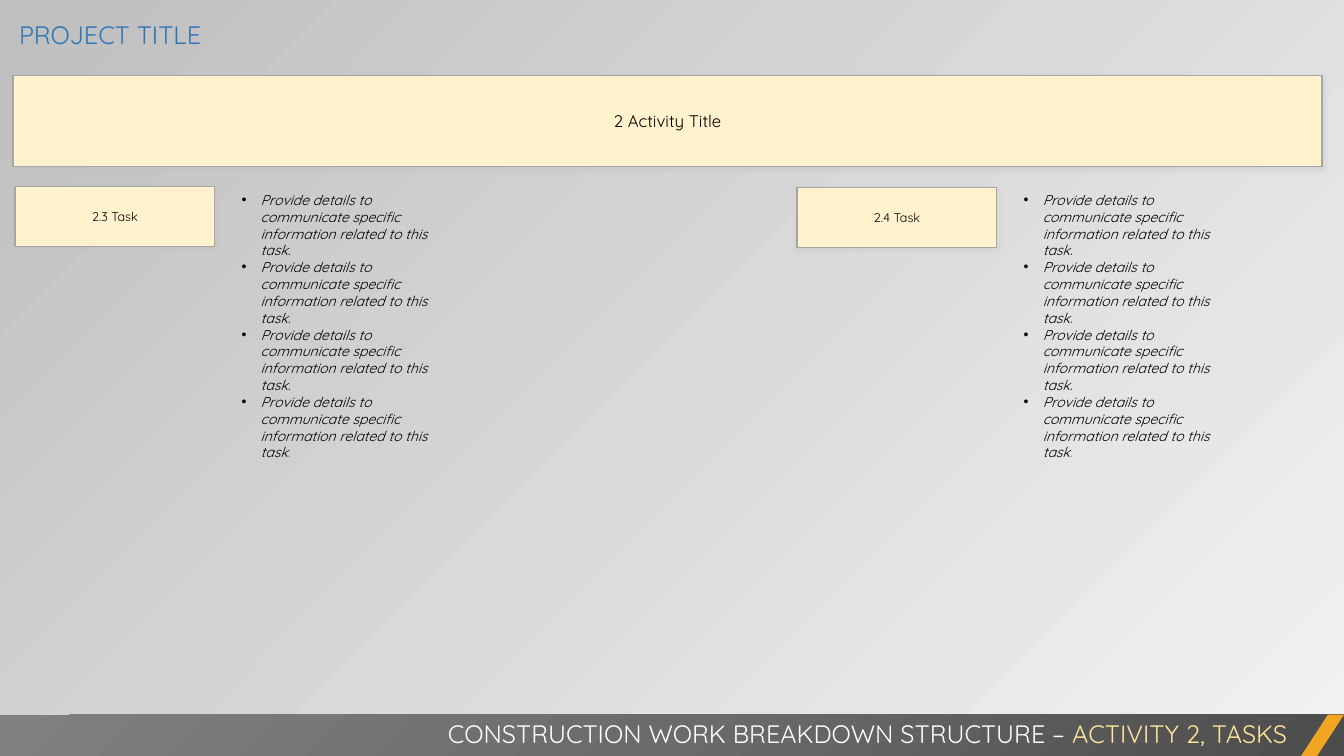
from dataclasses import dataclass

from lxml import etree
from pptx import Presentation
from pptx.dml.color import RGBColor
from pptx.enum.shapes import MSO_SHAPE
from pptx.enum.text import MSO_ANCHOR, MSO_AUTO_SIZE, PP_ALIGN
from pptx.oxml import parse_xml
from pptx.oxml.ns import nsdecls, qn
from pptx.shapes.autoshape import Shape
from pptx.slide import Slide
from pptx.text.text import TextFrame
from pptx.util import Cm, Pt

RECT, SLANT = MSO_SHAPE.RECTANGLE, MSO_SHAPE.PARALLELOGRAM
LEFT, MID, RIGHT = PP_ALIGN.LEFT, PP_ALIGN.CENTER, PP_ALIGN.RIGHT
TOP, CENTRE = MSO_ANCHOR.TOP, MSO_ANCHOR.MIDDLE
GROW = MSO_AUTO_SIZE.SHAPE_TO_FIT_TEXT

BLACK = RGBColor(0x00, 0x00, 0x00)
WHITE = RGBColor(0xFF, 0xFF, 0xFF)
CREAM = RGBColor(0xFF, 0xF2, 0xCC)
GOLD = RGBColor(0xFF, 0xE6, 0x99)
AMBER = RGBColor(0xF0, 0xA6, 0x22)
BLUE = RGBColor(0x2E, 0x75, 0xB6)
EDGE = RGBColor(0xA5, 0xA5, 0xA5)
SILVER = RGBColor(0xBF, 0xBF, 0xBF)
PALE = RGBColor(0xF2, 0xF2, 0xF2)
BAR_STOPS = (
    (0, RGBColor(0x4C, 0x4C, 0x4C)),
    (50, RGBColor(0x6B, 0x6B, 0x6B)),
    (100, RGBColor(0x80, 0x80, 0x80)),
)

FONT = "Quicksand"
WIDE, HIGH = 33.87, 19.05
BAR_TOP, BAR_HIGH = 18.01, 1.07
INDENT = 0.48
DETAIL = "Provide details to communicate specific information related to this task"

Run = tuple[str, RGBColor]


@dataclass(frozen=True)
class Area:
    x: float
    y: float
    w: float
    h: float


@dataclass(frozen=True)
class Task:
    name: str
    card: Area
    notes: Area


TASKS = (
    Task("2.3 Task", Area(0.38, 4.7, 5.03, 1.52), Area(5.84, 4.7, 5.23, 7.62)),
    Task("2.4 Task", Area(20.09, 4.72, 5.03, 1.52), Area(25.55, 4.7, 5.23, 7.62)),
)


def spot(area: Area) -> tuple[Cm, Cm, Cm, Cm]:
    return Cm(area.x), Cm(area.y), Cm(area.w), Cm(area.h)


def write(frame: TextFrame, paras: list[list[Run]], *, size: float,
          align: PP_ALIGN = LEFT, anchor: MSO_ANCHOR = TOP,
          italic: bool = False, bullet: bool = False) -> None:
    frame.word_wrap = True
    frame.vertical_anchor = anchor
    for i, runs in enumerate(paras):
        para = frame.paragraphs[0] if i == 0 else frame.add_paragraph()
        para.alignment = align
        if bullet:
            props = para._p.get_or_add_pPr()
            props.set("marL", str(Cm(INDENT)))
            props.set("indent", str(-Cm(INDENT)))
            etree.SubElement(props, qn("a:buFont")).set("typeface", "Arial")
            etree.SubElement(props, qn("a:buChar")).set("char", "•")
        for text, color in runs:
            run = para.add_run()
            run.text = text
            run.font.name = FONT
            run.font.size = Pt(size)
            run.font.italic = italic
            run.font.color.rgb = color


def label(slide: Slide, area: Area, paras: list[list[Run]], **style) -> None:
    frame = slide.shapes.add_textbox(*spot(area)).text_frame
    write(frame, paras, **style)
    frame.auto_size = GROW


def block(slide: Slide, kind: MSO_SHAPE, area: Area, fill: RGBColor) -> Shape:
    shape = slide.shapes.add_shape(kind, *spot(area))
    shape.shadow.inherit = False
    shape.fill.solid()
    shape.fill.fore_color.rgb = fill
    shape.line.fill.background()
    return shape


def card(slide: Slide, area: Area, text: str, size: float) -> None:
    shape = block(slide, RECT, area, CREAM)
    shape.line.color.rgb = EDGE
    shape.line.width = Pt(1)
    # Soft shadow straight below
    glow = shape._element.spPr.find(qn("a:effectLst"))
    glow.append(parse_xml(
        f'<a:outerShdw {nsdecls("a")} blurRad="{Pt(4)}" dist="{Pt(1)}" '
        f'dir="5400000" algn="t" rotWithShape="0"><a:srgbClr val="{SILVER}">'
        '<a:alpha val="40000"/></a:srgbClr></a:outerShdw>'))
    write(shape.text_frame, [[(text, BLACK)]], size=size, align=MID, anchor=CENTRE)


def shade(shape: Shape) -> None:
    stops = "".join(
        f'<a:gs pos="{pos * 1000}"><a:srgbClr val="{color}"/></a:gs>'
        for pos, color in BAR_STOPS)
    props = shape._element.spPr
    props.replace(props.find(qn("a:solidFill")), parse_xml(
        f'<a:gradFill {nsdecls("a")} rotWithShape="1"><a:gsLst>{stops}</a:gsLst>'
        '<a:path path="circle"><a:fillToRect l="100000" t="100000"/></a:path>'
        '</a:gradFill>'))


def main() -> None:
    deck = Presentation()
    deck.slide_width, deck.slide_height = Cm(WIDE), Cm(HIGH)
    slide = deck.slides.add_slide(deck.slide_layouts[6])

    # Background, lightest at the lower right
    back = slide.background.fill
    back.gradient()
    back.gradient_angle = 135
    for stop, color in zip(back.gradient_stops, (PALE, SILVER)):
        stop.color.rgb = color

    # Footer
    shade(block(slide, RECT, Area(0, BAR_TOP, WIDE, BAR_HIGH), WHITE))
    slant = block(slide, SLANT, Area(32.77, BAR_TOP, 1.1, BAR_HIGH), AMBER)
    slant.adjustments[0] = 0.65
    label(slide, Area(-0.91, 17.98, 33.6, 1.02),
          [[("CONSTRUCTION WORK BREAKDOWN STRUCTURE – ", WHITE),
            ("ACTIVITY 2, TASKS", GOLD)]], size=18, align=RIGHT)

    # Title and activity
    label(slide, Area(0.23, 0.36, 25.68, 1.02), [[("PROJECT TITLE", BLUE)]], size=18)
    card(slide, Area(0.33, 1.91, 32.99, 2.29), "2 Activity Title", 12)

    # Tasks with their details
    notes = [[(DETAIL + ".", BLACK)]] * 3 + [[(DETAIL, BLACK), (".", BLUE)]]
    for task in TASKS:
        card(slide, task.card, task.name, 9)
        label(slide, task.notes, notes, size=10, italic=True, bullet=True)

    deck.save("out.pptx")


if __name__ == "__main__":
    main()
